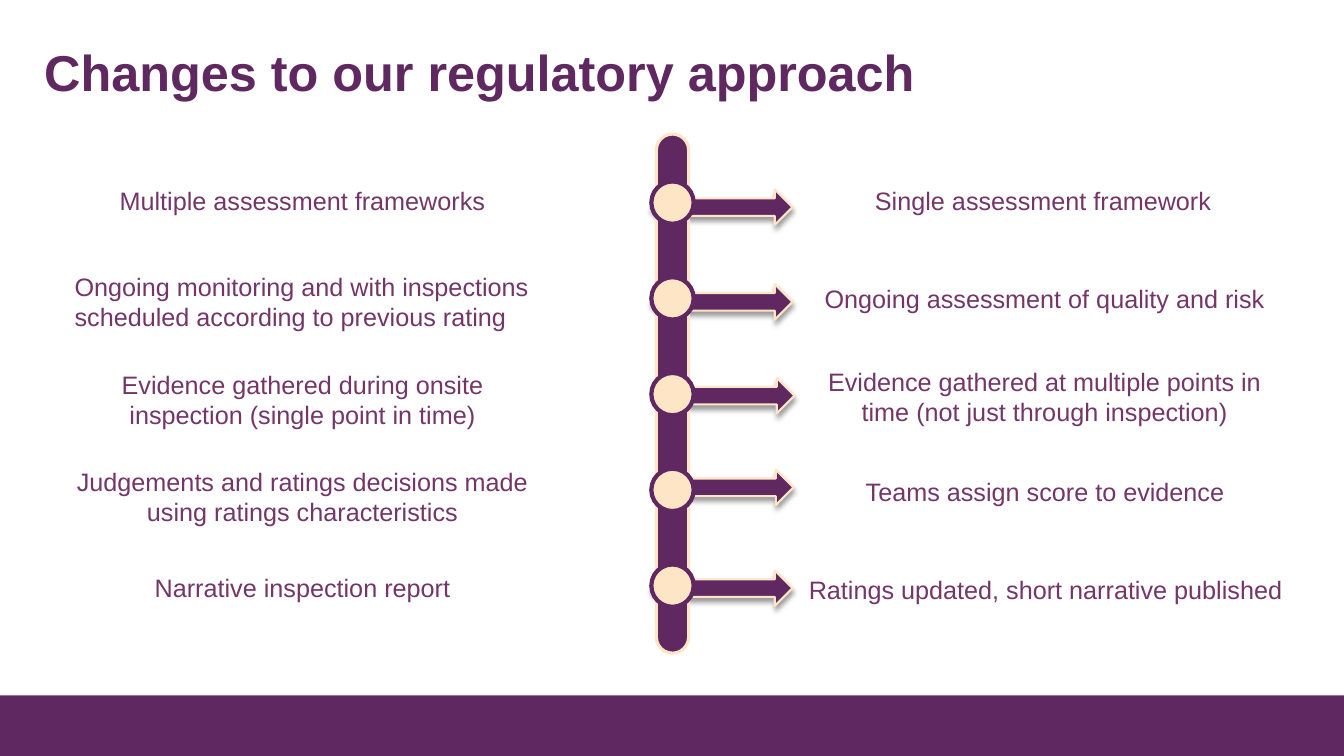
from dataclasses import dataclass

from lxml import etree
from pptx import Presentation
from pptx import util as u
from pptx.dml import color
from pptx.enum import shapes, text
from pptx.oxml import ns

PLUM, MAUVE, CREAM = "5F2861", "743669", "FDE5C5"
KIND = shapes.MSO_SHAPE
ALIGN = text.PP_ALIGN


@dataclass
class Box:
    left: float
    top: float
    width: float
    height: float

    def place(self) -> list:
        return [u.Inches(n) for n in (self.left, self.top, self.width, self.height)]


@dataclass
class Label:
    words: str
    box: Box
    align: ALIGN = ALIGN.CENTER
    inset: float = 0.1


@dataclass
class Change:
    before: Label
    after: Label
    arrow: tuple[float, float]  # left, top


CHANGES = [
    Change(Label("Multiple assessment frameworks", Box(0.52, 1.71, 4.96, 0.56)),
           Label("Single assessment framework", Box(7.87, 1.69, 4.95, 0.59)),
           (6.46, 1.88)),
    Change(Label("Ongoing monitoring and with inspections scheduled according to previous rating",
                 Box(0.52, 2.71, 4.96, 0.56), ALIGN.LEFT, 0.22),
           Label("Ongoing assessment of quality and risk", Box(7.87, 2.67, 4.98, 0.58)),
           (6.46, 2.82)),
    Change(Label("Evidence gathered during onsite inspection (single point in time)",
                 Box(0.52, 3.64, 4.96, 0.65)),
           Label("Evidence gathered at multiple points in time (not just through inspection)",
                 Box(7.88, 3.61, 4.96, 0.65)),
           (6.48, 3.75)),
    Change(Label("Judgements and ratings decisions made using ratings characteristics",
                 Box(0.52, 4.6, 4.96, 0.65)),
           Label("Teams assign score to evidence", Box(7.88, 4.55, 4.97, 0.65)),
           (6.47, 4.66)),
    Change(Label("Narrative inspection report", Box(0.52, 5.58, 4.96, 0.49)),
           Label("Ratings updated, short narrative published", Box(7.88, 5.6, 4.98, 0.49)),
           (6.46, 5.66)),
]


def paint(fmt, tint: str) -> None:
    fmt.rgb = color.RGBColor.from_string(tint)


def draw(slide, kind: KIND, box: Box, fill: str, line: str = "", width: float = 0):
    shape = slide.shapes.add_shape(kind, *box.place())
    shape.shadow.inherit = False
    shape.fill.solid()
    paint(shape.fill.fore_color, fill)
    if line:
        paint(shape.line.color, line)
        shape.line.width = u.Pt(width)
    else:
        shape.line.fill.background()
    return shape


def shade(shape) -> None:
    """Drop a soft shadow straight down."""
    effect = shape._element.spPr.find(ns.qn("a:effectLst"))
    outer = etree.SubElement(effect, ns.qn("a:outerShdw"), blurRad=str(u.Pt(4)),
                             dist=str(u.Pt(3)), dir="5400000", rotWithShape="0")
    tint = etree.SubElement(outer, ns.qn("a:srgbClr"), val="000000")
    etree.SubElement(tint, ns.qn("a:alpha"), val="40000")


def write(slide, label: Label, size: float, tint: str, bold: bool = False) -> None:
    frame = slide.shapes.add_textbox(*label.box.place()).text_frame
    frame.word_wrap = True
    frame.vertical_anchor = text.MSO_ANCHOR.MIDDLE
    frame.margin_left = u.Inches(label.inset)
    frame.text = label.words
    para = frame.paragraphs[0]
    para.alignment = label.align
    font = para.runs[0].font
    font.name, font.size, font.bold = "Arial", u.Pt(size), bold
    paint(font.color, tint)


def main() -> None:
    deck = Presentation()
    deck.slide_width, deck.slide_height = u.Inches(13.33), u.Inches(7.5)
    slide = deck.slides.add_slide(deck.slide_layouts[6])

    # Footer band and title
    draw(slide, KIND.RECTANGLE, Box(0, 6.9, 13.33, 0.6), PLUM)
    title = Label("Changes to our regulatory approach", Box(0.34, 0.29, 12.51, 0.83), ALIGN.LEFT)
    write(slide, title, 36, PLUM, True)

    # Arrows, behind the spine
    for change in CHANGES:
        shade(draw(slide, KIND.LEFT_RIGHT_ARROW, Box(*change.arrow, 1.4, 0.35), PLUM, CREAM, 1.5))

    # Spine
    spine = draw(slide, KIND.ROUNDED_RECTANGLE, Box(6.51, 1.33, 0.32, 5.15), PLUM, CREAM, 2.25)
    spine.adjustments[0] = 0.5

    # Evenly spaced dots, with the labels on both sides
    for row, change in enumerate(CHANGES):
        dot = Box(6.46, 1.8 + 0.95 * row, 0.42, 0.42)
        draw(slide, KIND.FLOWCHART_CONNECTOR, dot, CREAM, PLUM, 3)
        for label in (change.before, change.after):
            write(slide, label, 18, MAUVE)

    deck.save("out.pptx")


if __name__ == "__main__":
    main()
